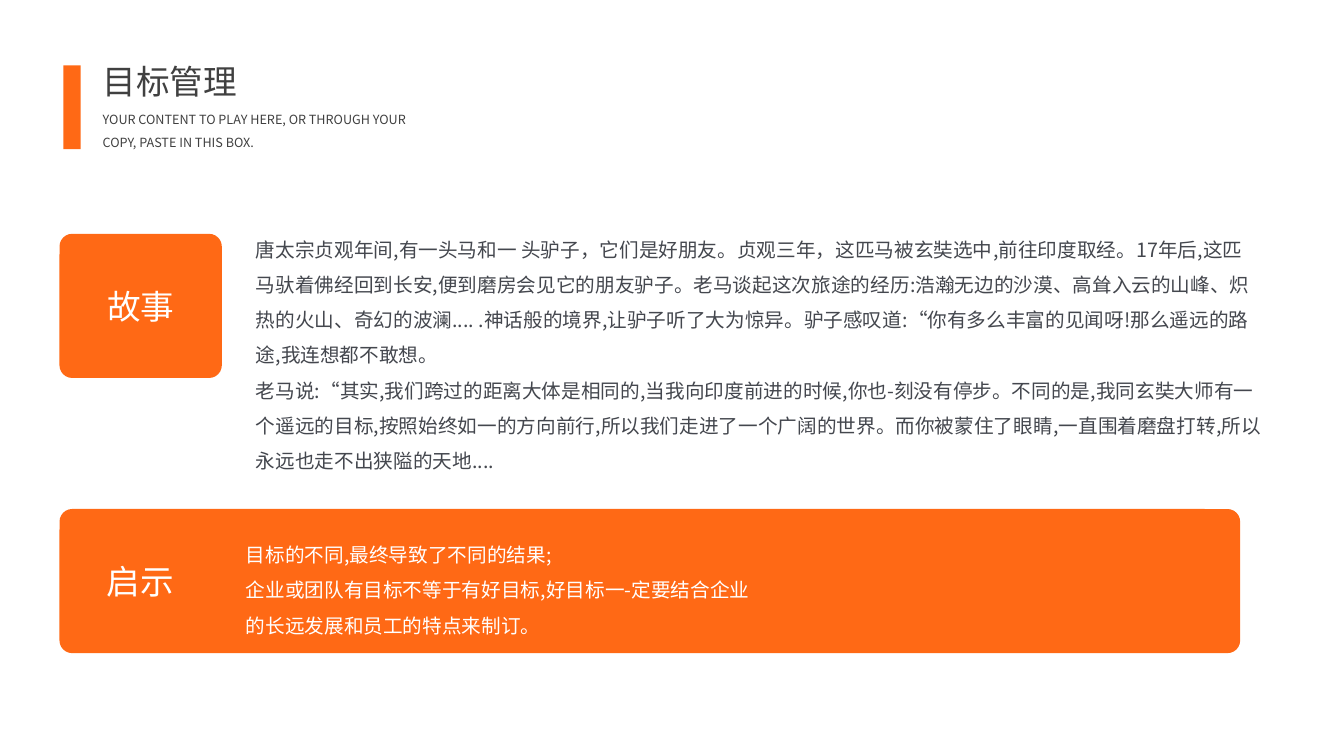
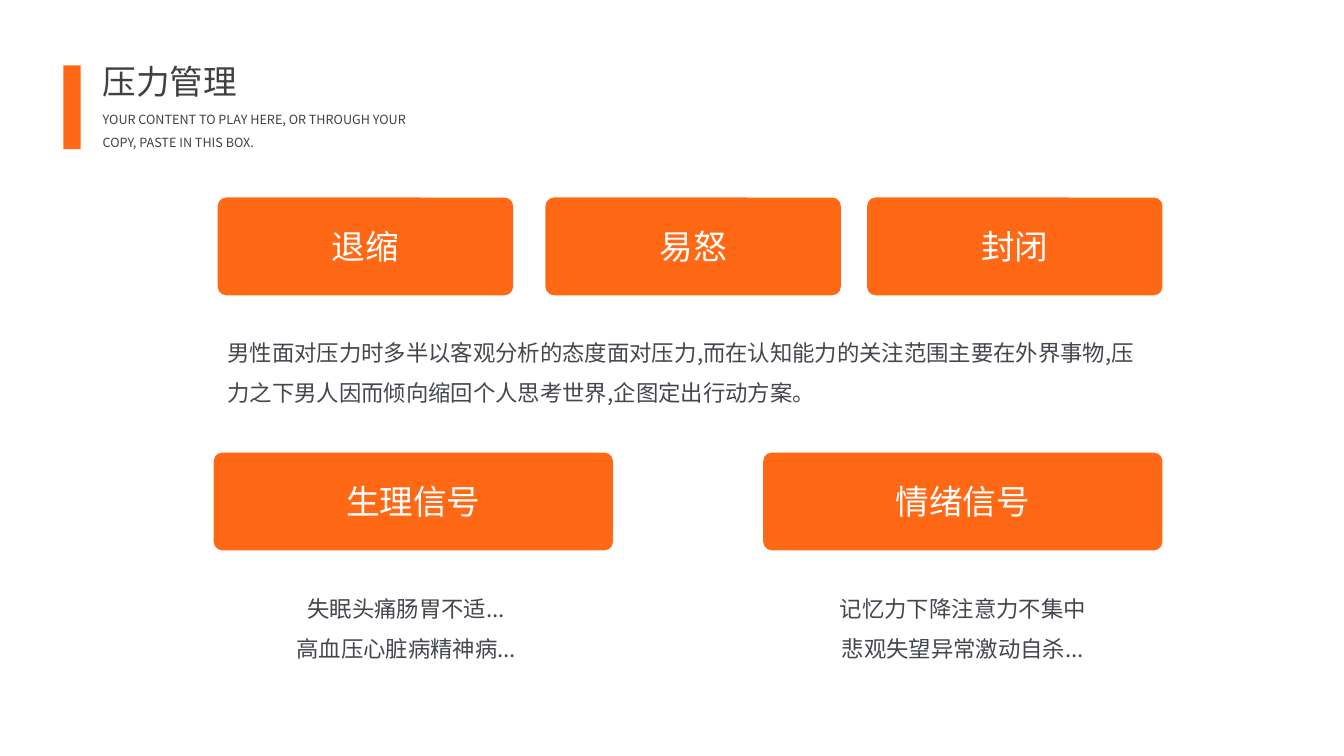
from dataclasses import dataclass
from typing import NamedTuple

from lxml.etree import SubElement
from pptx import Presentation
from pptx.dml.color import RGBColor
from pptx.enum.shapes import MSO_SHAPE as Shape
from pptx.enum.text import MSO_ANCHOR as Anchor, PP_ALIGN as Align
from pptx.oxml.ns import qn
from pptx.util import Inches, Pt


@dataclass(frozen=True)
class Theme:
    font: str = "Noto Sans CJK SC"
    accent: RGBColor = RGBColor(0xFF, 0x69, 0x15)
    heading: RGBColor = RGBColor(0x40, 0x40, 0x40)
    body: RGBColor = RGBColor(0x44, 0x47, 0x4E)
    on_accent: RGBColor = RGBColor(0xFF, 0xFF, 0xFF)
    title_size: int = 24
    subtitle_size: int = 9
    story_size: int = 14
    body_size: int = 16
    line_spacing: float = 1.5
    corner: float = 0.088


class Box(NamedTuple):
    """A rectangle in inches."""
    left: float
    top: float
    width: float
    height: float

    def inner(self, dx, dy, width, height):
        return Box(self.left + dx, self.top + dy, width, height)

    def emu(self):
        return [Inches(length) for length in self]


THEME = Theme()
SUBTITLE = "YOUR CONTENT TO PLAY HERE, OR THROUGH YOUR COPY, PASTE IN THIS BOX."


def write(frame, lines, size, color, align=Align.LEFT, spacing=None):
    """Fill a text frame with one paragraph per line in the theme font."""
    frame.word_wrap = True
    frame.text = "\n".join(lines)
    for paragraph in frame.paragraphs:
        paragraph.alignment = align
        paragraph.line_spacing = spacing
        for run in paragraph.runs:
            run.font.size = Pt(size)
            run.font.color.rgb = color
            run.font.name = THEME.font
            east_asian = SubElement(run.font._element, qn("a:ea"))
            east_asian.set("typeface", THEME.font)


def add_text(slide, box, lines, size, color, align=Align.LEFT,
             spacing=THEME.line_spacing):
    frame = slide.shapes.add_textbox(*box.emu()).text_frame
    write(frame, lines, size, color, align, spacing)


def add_block(slide, kind, box):
    block = slide.shapes.add_shape(kind, *box.emu())
    block.shadow.inherit = False
    block.fill.solid()
    block.fill.fore_color.rgb = THEME.accent
    block.line.fill.background()
    return block


def add_card(slide, box, label, label_width=None):
    """Rounded card; its label is centred in the leftmost label_width."""
    card = add_block(slide, Shape.ROUNDED_RECTANGLE, box)
    card.adjustments[0] = THEME.corner
    frame = card.text_frame
    frame.vertical_anchor = Anchor.MIDDLE
    frame.margin_left = Inches(0.1)
    frame.margin_right = Inches(0.1 + box.width - (label_width or box.width))
    write(frame, [label], THEME.title_size, THEME.on_accent, Align.CENTER)


def add_header(slide, box, title):
    add_text(slide, box.inner(0.29, -0.09, 2.21, 0.5), [title],
             THEME.title_size, THEME.heading, spacing=None)
    add_text(slide, box.inner(0.29, 0.34, 3.32, 0.56), [SUBTITLE],
             THEME.subtitle_size, THEME.heading)
    add_block(slide, Shape.RECTANGLE, box.inner(0, 0, 0.17, box.height))


def add_story(slide, box, label, paragraphs):
    add_card(slide, box.inner(0, 0, 1.61, 1.43), label)
    add_text(slide, box.inner(1.85, -0.13, box.width - 1.85, box.height),
             paragraphs, THEME.story_size, THEME.body)


def add_lesson(slide, box, label, lines):
    add_card(slide, box, label, label_width=1.61)
    add_text(slide, box.inner(1.75, 0.17, 5.97, 1.16), lines,
             THEME.story_size, THEME.on_accent)


def add_reactions(slide, box, reactions, summary):
    """Row of cards, given as (offset, label), above a summary."""
    for offset, label in reactions:
        add_card(slide, box.inner(offset, 0, 2.93, 0.97), label)
    add_text(slide, box.inner(0, 1.22, box.width, 0.86), [summary],
             THEME.body_size, THEME.body)


def add_signal(slide, box, label, symptoms, text_shift=0):
    add_card(slide, box.inner(0, 0, box.width, 0.97), label)
    add_text(slide, box.inner(text_shift, 1.23, box.width, 0.86), symptoms,
             THEME.body_size, THEME.body, Align.CENTER)


def add_slide(deck, title):
    slide = deck.slides.add_slide(deck.slide_layouts[6])
    add_header(slide, Box(0.63, 0.65, 3.61, 0.83), title)
    return slide


def build_goals(deck):
    slide = add_slide(deck, "目标管理")
    add_story(slide, Box(0.59, 2.32, 12.02, 2.57), "故事", [
        "唐太宗贞观年间,有一头马和一 头驴子，它们是好朋友。贞观三年，"
        "这匹马被玄奘选中,前往印度取经。17年后,这匹马驮着佛经回到长安,"
        "便到磨房会见它的朋友驴子。老马谈起这次旅途的经历:浩瀚无边的沙漠、"
        "高耸入云的山峰、炽热的火山、奇幻的波澜.... .神话般的境界,"
        "让驴子听了大为惊异。驴子感叹道:“你有多么丰富的见闻呀!"
        "那么遥远的路途,我连想都不敢想。",
        "老马说:“其实,我们跨过的距离大体是相同的,当我向印度前进的时候,"
        "你也-刻没有停步。不同的是,我同玄奘大师有一个遥远的目标,"
        "按照始终如一的方向前行,所以我们走进了一个广阔的世界。"
        "而你被蒙住了眼睛,一直围着磨盘打转,所以永远也走不出狭隘的天地....",
    ])
    add_lesson(slide, Box(0.59, 5.05, 11.71, 1.43), "启示", [
        "目标的不同,最终导致了不同的结果;",
        "企业或团队有目标不等于有好目标,好目标一-定要结合企业",
        "的长远发展和员工的特点来制订。",
    ])


def build_stress(deck):
    slide = add_slide(deck, "压力管理")
    add_reactions(
        slide, Box(2.16, 1.96, 9.37, 2.08),
        [(0, "退缩"), (3.25, "易怒"), (6.44, "封闭")],
        "男性面对压力时多半以客观分析的态度面对压力,"
        "而在认知能力的关注范围主要在外界事物,"
        "压力之下男人因而倾向缩回个人思考世界,企图定出行动方案。")
    add_signal(slide, Box(2.12, 4.49, 3.96, 2.09), "生理信号",
               ["失眠头痛肠胃不适...", "高血压心脏病精神病..."],
               text_shift=-0.07)
    add_signal(slide, Box(7.57, 4.49, 3.96, 2.09), "情绪信号",
               ["记忆力下降注意力不集中", "悲观失望异常激动自杀..."])


def main():
    deck = Presentation()
    deck.slide_width, deck.slide_height = Inches(13.33), Inches(7.5)
    build_goals(deck)
    build_stress(deck)
    deck.save("out.pptx")


if __name__ == "__main__":
    main()
